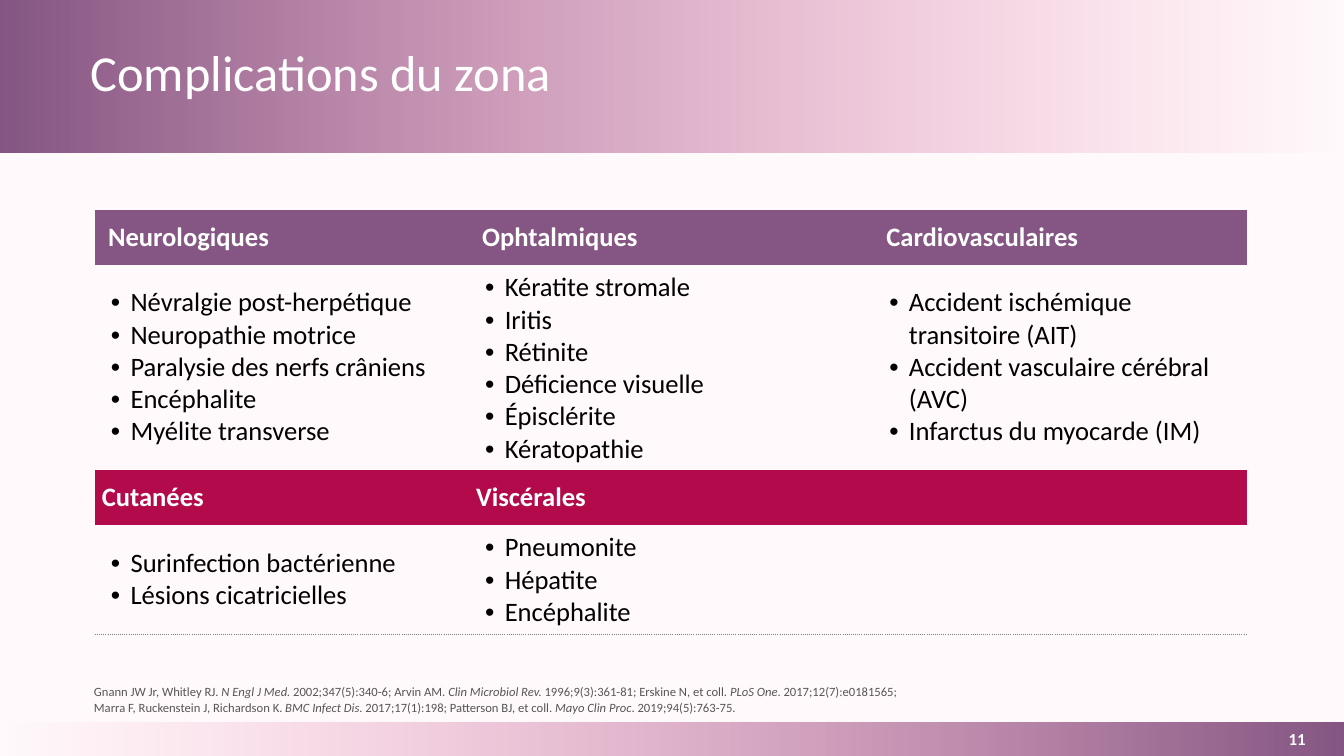
from lxml.etree import SubElement
from pptx import Presentation
from pptx.dml.color import RGBColor
from pptx.enum.shapes import MSO_SHAPE as Shape
from pptx.enum.text import MSO_ANCHOR as Anchor, PP_ALIGN as Align
from pptx.oxml import parse_xml
from pptx.oxml.ns import nsdecls, qn
from pptx.util import Pt

COLORS = {
    "background": "FFF9FB",
    "purple": "855683",
    "pink": "F87FAE",
    "crimson": "B20A4B",
    "white": "FFFFFF",
    "black": "000000",
    "gray": "555555",
    "rule": "808080",
}
FONT = "Calibri"
NO_STYLE = "{2D5ABB26-0587-4C30-8999-92F81FD0307C}"
PAGE_W, PAGE_H = 960, 540
BANNER_H, FOOTER_H = 109, 24
COLUMNS = (267.3, 288.7, 267.3)
HEADER_H = 39

# Heading colour, heading side inset, list height, then (heading, items) by column
SECTIONS = [
    ("purple", 9.4, 144, [
        ("Neurologiques", ["Névralgie post-herpétique", "Neuropathie motrice",
                           "Paralysie des nerfs crâniens", "Encéphalite",
                           "Myélite transverse"]),
        ("Ophtalmiques", ["Kératite stromale", "Iritis", "Rétinite",
                          "Déficience visuelle", "Épisclérite", "Kératopathie"]),
        ("Cardiovasculaires", ["Accident ischémique transitoire (AIT)",
                               "Accident vasculaire cérébral (AVC)",
                               "Infarctus du myocarde (IM)"]),
    ]),
    ("crimson", 5, 77, [
        ("Cutanées", ["Surinfection bactérienne", "Lésions cicatricielles"]),
        ("Viscérales", ["Pneumonite", "Hépatite", "Encéphalite"]),
        ("", []),
    ]),
]

# Each line alternates plain text and italic journal names
REFERENCES = [
    ["Gnann JW Jr, Whitley RJ. ", "N Engl J Med. ",
     "2002;347(5):340-6; Arvin AM. ", "Clin Microbiol Rev. ",
     "1996;9(3):361-81; Erskine N, et coll. ", "PLoS One",
     ". 2017;12(7):e0181565;"],
    ["Marra F, Ruckenstein J, Richardson K. ", "BMC Infect Dis",
     ". 2017;17(1):198; Patterson BJ, et coll. ", "Mayo Clin Proc",
     ". 2019;94(5):763-75."],
]


def rgb(name):
    return RGBColor.from_string(COLORS[name])


def add_span(para, text, size, color, bold=False, italic=False):
    span = para.add_run()
    span.text = text
    font = span.font
    font.name, font.size, font.bold, font.italic = FONT, Pt(size), bold, italic
    font.color.rgb = rgb(color)


def add_text_box(page, left, top, width, height, anchor, inset=None):
    """Add a wrapping text box and return its first paragraph."""
    box = page.shapes.add_textbox(Pt(left), Pt(top), Pt(width), Pt(height))
    frame = box.text_frame
    frame.word_wrap = True
    frame.vertical_anchor = anchor
    if inset is not None:
        frame.margin_left = frame.margin_right = Pt(inset)
        frame.margin_top = frame.margin_bottom = Pt(inset)
    return frame.paragraphs[0]


def add_fading_band(page, left, top, width, height, angle):
    """Add a bar that goes from solid purple to clear pink."""
    band = page.shapes.add_shape(Shape.RECTANGLE, Pt(left), Pt(top), Pt(width), Pt(height))
    band.shadow.inherit = False
    band.line.fill.background()
    band.fill.gradient()
    band.fill.gradient_angle = angle
    start, end = band.fill.gradient_stops
    start.position, end.position = 0, 1
    start.color.rgb, end.color.rgb = rgb("purple"), rgb("pink")
    clear = band._element.spPr.findall(".//" + qn("a:srgbClr"))[-1]
    SubElement(clear, qn("a:alpha"), val="0")


def add_banner(page, left, top, width, height):
    add_fading_band(page, left, top, width, height, 0)
    para = add_text_box(page, left + 57.6, top + 13, width - 134, 82, Anchor.MIDDLE)
    para.line_spacing = 0.9
    add_span(para, "Complications du zona", 36, "white")


def add_footer(page, left, top, width, height):
    add_fading_band(page, left, top, width, height, 180)
    number_w = 67
    para = add_text_box(page, left + width - number_w, top, number_w, height,
                        Anchor.MIDDLE, 0)
    para.alignment = Align.CENTER
    add_span(para, "11", 12, "white", bold=True)


def add_bullet(para):
    props = para._p.get_or_add_pPr()
    props.set("marL", str(Pt(14)))
    props.set("indent", str(Pt(-14)))
    SubElement(props, qn("a:buFont"), typeface="Arial")
    SubElement(props, qn("a:buChar"), char="•")


def set_margins(cell, left, right):
    cell.vertical_anchor = Anchor.MIDDLE
    cell.margin_left, cell.margin_right = Pt(left), Pt(right)
    cell.margin_top = cell.margin_bottom = Pt(5)


def fill_heading(cell, text, color, inset):
    set_margins(cell, inset, inset)
    cell.fill.solid()
    cell.fill.fore_color.rgb = rgb(color)
    if text:
        add_span(cell.text_frame.paragraphs[0], text, 19, "white", bold=True)


def fill_list(cell, items):
    set_margins(cell, 11.5, 5)
    cell.fill.background()
    frame = cell.text_frame
    for index, item in enumerate(items):
        para = frame.add_paragraph() if index else frame.paragraphs[0]
        add_bullet(para)
        add_span(para, item, 19, "black")


def add_bottom_rule(cell):
    rule = parse_xml(
        f'<a:lnB {nsdecls("a")} w="{Pt(0.75)}"><a:solidFill>'
        f'<a:srgbClr val="{COLORS["rule"]}"/></a:solidFill>'
        '<a:prstDash val="sysDot"/></a:lnB>')
    cell._tc.get_or_add_tcPr().insert(0, rule)


def add_complications(page, left, top):
    heights = [h for section in SECTIONS for h in (HEADER_H, section[2])]
    table = page.shapes.add_table(len(heights), len(COLUMNS), Pt(left), Pt(top),
                                  Pt(sum(COLUMNS)), Pt(sum(heights))).table
    table.first_row = table.horz_banding = False
    table._tbl.tblPr.find(qn("a:tableStyleId")).text = NO_STYLE
    for column, width in zip(table.columns, COLUMNS):
        column.width = Pt(width)
    for row, height in zip(table.rows, heights):
        row.height = Pt(height)
    for index, (color, inset, _, groups) in enumerate(SECTIONS):
        for col, (heading, items) in enumerate(groups):
            fill_heading(table.cell(2 * index, col), heading, color, inset)
            fill_list(table.cell(2 * index + 1, col), items)
    for cell in table.rows[len(heights) - 1].cells:
        add_bottom_rule(cell)


def add_references(page, left, top, width, height):
    para = add_text_box(page, left, top, width, height, Anchor.BOTTOM)
    for number, line in enumerate(REFERENCES):
        if number:
            para.add_line_break()
        for index, text in enumerate(line):
            add_span(para, text, 9, "gray", italic=index % 2 == 1)


def main():
    deck = Presentation()
    deck.slide_width, deck.slide_height = Pt(PAGE_W), Pt(PAGE_H)
    page = deck.slides.add_slide(deck.slide_layouts[6])
    page.background.fill.solid()
    page.background.fill.fore_color.rgb = rgb("background")
    add_banner(page, 0, 0, PAGE_W, BANNER_H)
    add_complications(page, 67.8, 150)
    add_references(page, 60, 466, 840, 48)
    add_footer(page, 0, PAGE_H - FOOTER_H, PAGE_W, FOOTER_H)
    deck.save("out.pptx")


if __name__ == "__main__":
    main()
